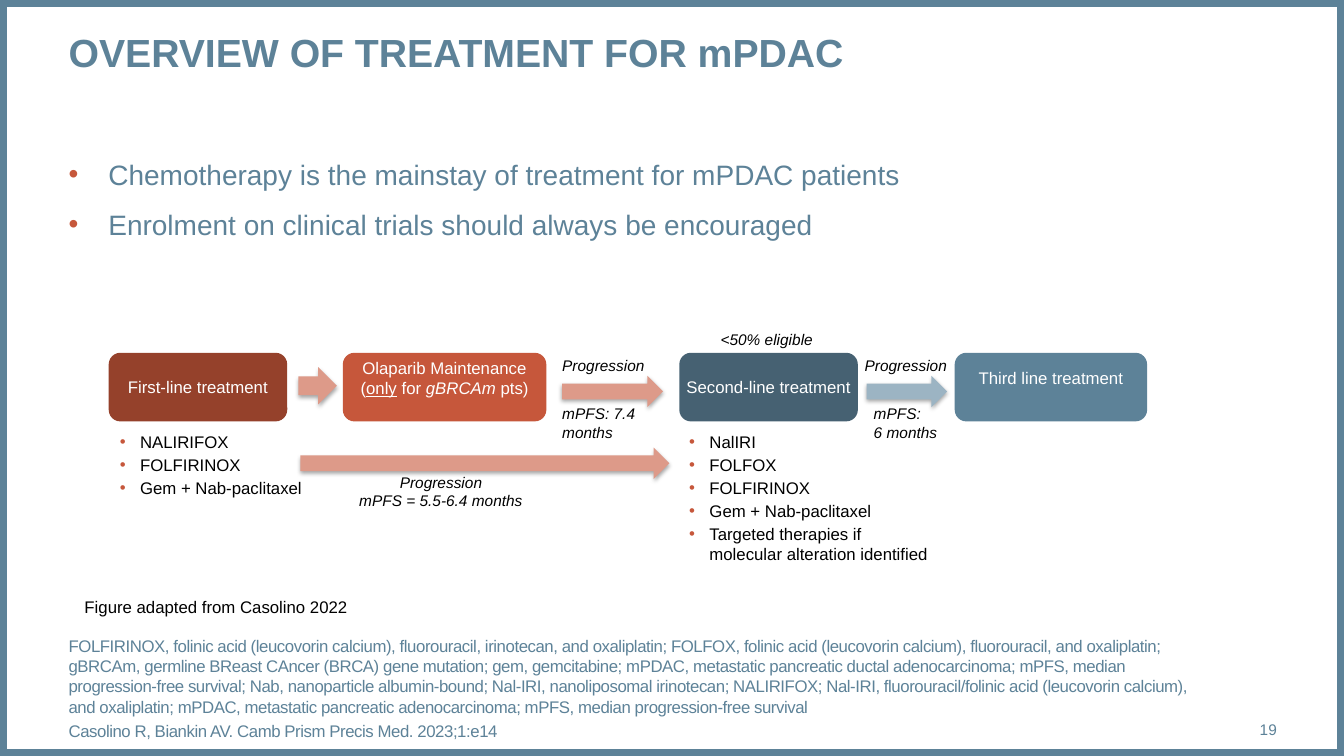
import pptx
import pptx.util
import pptx.dml.color
import pptx.enum.shapes
import pptx.enum.text
import pptx.oxml
from pptx.oxml.ns import nsdecls

Cm = pptx.util.Cm
Pt = pptx.util.Pt
RGBColor = pptx.dml.color.RGBColor
SHAPE = pptx.enum.shapes.MSO_SHAPE
ALIGN = pptx.enum.text.PP_ALIGN
ANCHOR = pptx.enum.text.MSO_ANCHOR

BLUE = RGBColor(0x5D, 0x82, 0x98)
DARK_BLUE = RGBColor(0x46, 0x61, 0x72)
PALE_BLUE = RGBColor(0x9C, 0xB4, 0xC3)
RUST = RGBColor(0xC6, 0x57, 0x3B)
DARK_RUST = RGBColor(0x95, 0x41, 0x2B)
PALE_RUST = RGBColor(0xDD, 0x9A, 0x89)
BLACK = RGBColor(0, 0, 0)
WHITE = RGBColor(0xFF, 0xFF, 0xFF)

TITLE = "OVERVIEW OF TREATMENT FOR mPDAC"
MESSAGES = [
    "Chemotherapy is the mainstay of treatment for mPDAC patients",
    "Enrolment on clinical trials should always be encouraged",
]
FOOTNOTES = [
    "FOLFIRINOX, folinic acid (leucovorin calcium), fluorouracil, irinotecan, and oxaliplatin; "
    "FOLFOX, folinic acid (leucovorin calcium), fluorouracil, and oxaliplatin; "
    "gBRCAm, germline BReast CAncer (BRCA) gene mutation; gem, gemcitabine; "
    "mPDAC, metastatic pancreatic ductal adenocarcinoma; mPFS, median progression-free survival; "
    "Nab, nanoparticle albumin-bound; Nal-IRI, nanoliposomal irinotecan; "
    "NALIRIFOX; Nal-IRI, fluorouracil/folinic acid (leucovorin calcium), and oxaliplatin; "
    "mPDAC, metastatic pancreatic adenocarcinoma; mPFS, median progression-free survival",
    "Casolino R, Biankin AV. Camb Prism Precis Med. 2023;1:e14",
]
FIGURE_SOURCE = "Figure adapted from Casolino 2022"
PAGE_NUMBER = "19"

# left, width, fill, side inset, bottom inset, (text, style) spans
STAGES = [
    (2.74, 4.5, DARK_RUST, 0, 0.13, [("First-line treatment", "")]),
    (8.64, 5.13, RUST, 0.25, 0.6, [
        ("Olaparib Maintenance (", ""), ("only", "underline"), (" for ", ""),
        ("gBRCAm ", "italic"), ("pts)", "")]),
    (17.12, 4.5, DARK_BLUE, 0, 0.13, [("Second-line treatment", "")]),
    (24.06, 4.85, BLUE, 0.25, 0.6, [("Third line treatment", "")]),
]
REGIMENS = [
    (3.02, ["NALIRIFOX", "FOLFIRINOX", "Gem + Nab-paclitaxel"]),
    (17.37, ["NalIRI", "FOLFOX", "FOLFIRINOX", "Gem + Nab-paclitaxel",
             "Targeted therapies if\nmolecular alteration identified"]),
]
ARROWS = [
    (7.52, 9.25, 0.97, 0.94, PALE_RUST),
    (7.57, 11.28, 9.3, 0.79, PALE_RUST),
    (14.17, 9.47, 2.54, 0.79, PALE_RUST),
    (21.84, 9.47, 2.03, 0.79, PALE_BLUE),
]
ARROW_NOTES = [
    (18.16, 8.31, 2.72, "<50% eligible", ALIGN.LEFT),
    (14.17, 8.97, 2.72, "Progression", ALIGN.LEFT),
    (14.17, 10.19, 2.72, "mPFS: 7.4\nmonths", ALIGN.LEFT),
    (8.23, 11.91, 5.77, "Progression\nmPFS = 5.5-6.4 months", ALIGN.CENTER),
    (21.79, 8.97, 2.72, "Progression", ALIGN.LEFT),
    (22.02, 10.19, 2.72, "mPFS:\n6 months", ALIGN.LEFT),
]
STAGE_TOP, STAGE_HEIGHT = 8.89, 1.73
REGIMEN_TOP, REGIMEN_WIDTH, REGIMEN_LINE = 10.87, 8.48, 0.56
NOTE_LINE = 0.47
MARGIN = 1.73


def place(box, left, top, width, height):
    box.left, box.top, box.width, box.height = Cm(left), Cm(top), Cm(width), Cm(height)


def style(span, size, color):
    span.font.name = "Arial"
    span.font.size = Pt(size)
    span.font.color.rgb = color


def add_bullet(para, indent):
    props = para._p.get_or_add_pPr()
    props.set("marL", str(Cm(indent)))
    props.set("indent", str(-Cm(indent)))
    for tag in (f'<a:buClr {nsdecls("a")}><a:srgbClr val="{RUST}"/></a:buClr>',
                f'<a:buFont {nsdecls("a")} typeface="Arial"/>',
                f'<a:buChar {nsdecls("a")} char="•"/>'):
        props.append(pptx.oxml.parse_xml(tag))


def write(box, lines, size, color, align=ALIGN.LEFT, anchor=ANCHOR.TOP,
          before=0, after=0, indent=0):
    frame = box.text_frame
    frame.auto_size = pptx.enum.text.MSO_AUTO_SIZE.NONE
    frame.word_wrap = True
    frame.vertical_anchor = anchor
    frame.margin_left = frame.margin_right = frame.margin_top = frame.margin_bottom = 0
    for index, line in enumerate(lines):
        para = frame.add_paragraph() if index else frame.paragraphs[0]
        para.text = line
        if indent:
            add_bullet(para, indent)
        para.alignment = align
        para.space_before = Pt(before if index else 0)
        para.space_after = Pt(after)
        for span in para.runs:
            style(span, size, color)
    return [span for para in frame.paragraphs for span in para.runs]


def add_text(page, left, top, width, height, lines, size, color, **options):
    box = page.shapes.add_textbox(Cm(left), Cm(top), Cm(width), Cm(height))
    return write(box, lines, size, color, **options)


def add_filled(page, kind, left, top, width, height, fill):
    shape = page.shapes.add_shape(kind, Cm(left), Cm(top), Cm(width), Cm(height))
    shape.shadow.inherit = False
    shape.fill.solid()
    shape.fill.fore_color.rgb = fill
    shape.line.fill.background()
    return shape


def add_stage(page, left, width, fill, side, bottom, spans):
    stage = add_filled(page, SHAPE.ROUNDED_RECTANGLE, left, STAGE_TOP, width, STAGE_HEIGHT, fill)
    stage.adjustments[0] = 0.17
    frame = stage.text_frame
    frame.word_wrap = True
    frame.vertical_anchor = ANCHOR.MIDDLE
    frame.margin_left = frame.margin_right = Cm(side)
    frame.margin_top, frame.margin_bottom = Cm(0.13), Cm(bottom)
    para = frame.paragraphs[0]
    para.alignment = ALIGN.CENTER
    for text, emphasis in spans:
        span = para.add_run()
        span.text = text
        style(span, 12, WHITE)
        if emphasis:
            setattr(span.font, emphasis, True)


def add_arrow(page, left, top, width, height, fill):
    arrow = add_filled(page, SHAPE.RIGHT_ARROW, left, top, width, height, fill)
    effects = arrow._element.spPr.find(pptx.oxml.ns.qn("a:effectLst"))
    effects.append(pptx.oxml.parse_xml(
        f'<a:outerShdw {nsdecls("a")} blurRad="{Pt(3.1)}" dist="{Pt(1.8)}" dir="5400000" '
        'rotWithShape="0"><a:srgbClr val="000000"><a:alpha val="35000"/></a:srgbClr></a:outerShdw>'))


def main():
    deck = pptx.Presentation()
    deck.slide_width, deck.slide_height = Cm(33.87), Cm(19.05)
    page = deck.slides.add_slide(deck.slide_layouts[1])

    border = page.shapes.add_shape(SHAPE.RECTANGLE, 0, 0, deck.slide_width, deck.slide_height)
    border.shadow.inherit = False
    border.fill.background()
    border.line.color.rgb = BLUE
    border.line.width = Pt(10)

    title, body = page.shapes.title, page.placeholders[1]
    place(title, MARGIN, 0.71, 30.45, 2.39)
    for span in write(title, [TITLE], 28, BLUE):
        span.font.bold = True
    place(body, MARGIN, 3.96, 30.45, 3.48)
    write(body, MESSAGES, 20, BLUE, before=12, indent=1)

    for stage in STAGES:
        add_stage(page, *stage)
    for left, drugs in REGIMENS:
        add_text(page, left, REGIMEN_TOP, REGIMEN_WIDTH, REGIMEN_LINE * len(drugs),
                 drugs, 12, BLACK, after=2, indent=0.51)
    for arrow in ARROWS:
        add_arrow(page, *arrow)
    for left, top, width, note, align in ARROW_NOTES:
        height = NOTE_LINE * (note.count("\n") + 1)
        for span in add_text(page, left, top, width, height, [note], 11, BLACK, align=align):
            span.font.italic = True

    add_text(page, 2.13, 15.04, 7.14, 0.5, [FIGURE_SOURCE], 12, BLACK)
    for span in add_text(page, MARGIN, 17.65, 28.27, 1.02, FOOTNOTES, 12, BLUE,
                         anchor=ANCHOR.BOTTOM, before=3):
        span._r.get_or_add_rPr().set("spc", "-30")
    add_text(page, 30, 17.86, 2.18, 1.02, [PAGE_NUMBER], 11, BLUE,
             align=ALIGN.RIGHT, anchor=ANCHOR.MIDDLE)
    deck.save("out.pptx")


if __name__ == "__main__":
    main()
